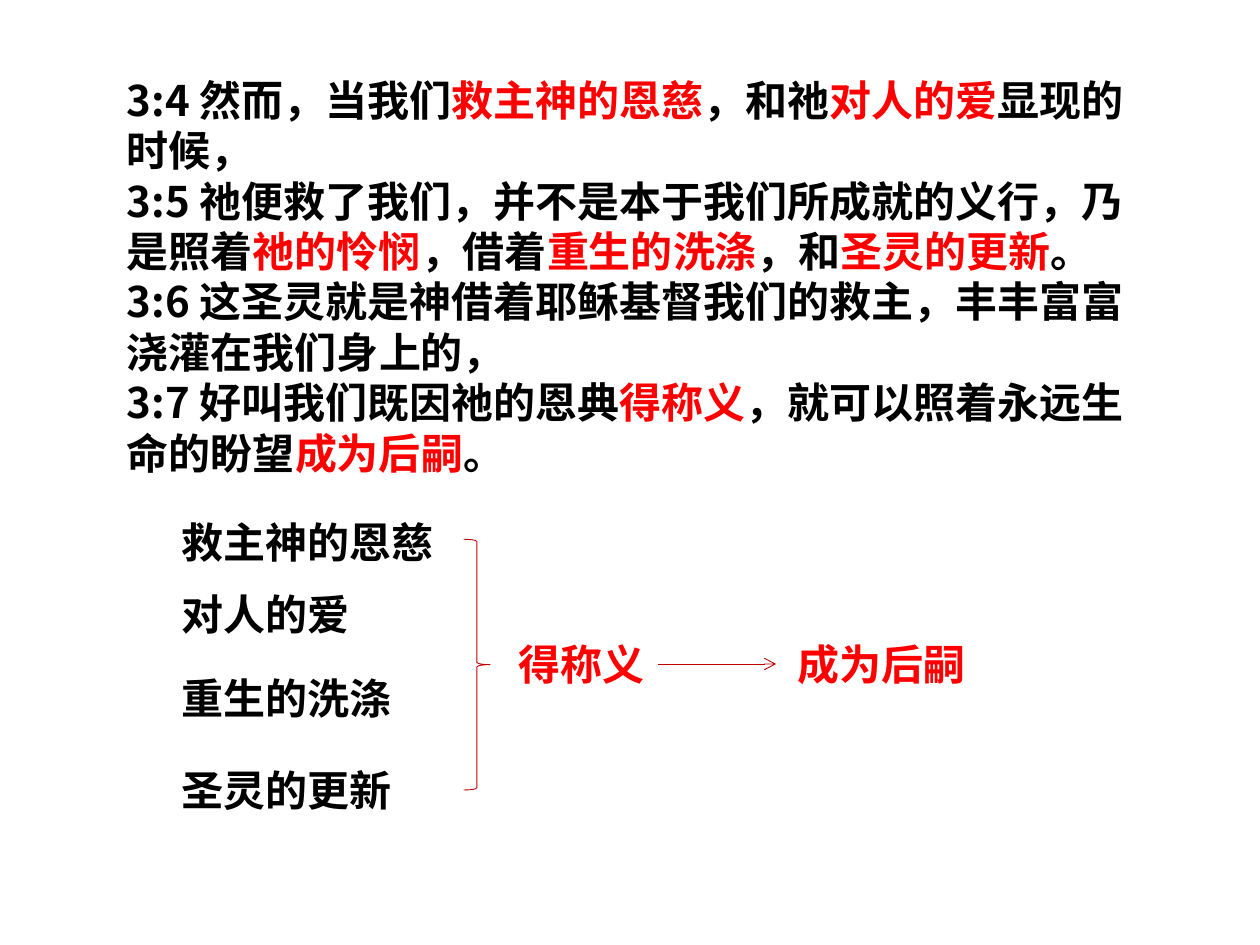
from lxml.etree import SubElement
from pptx import Presentation
from pptx.dml.color import RGBColor
from pptx.enum.shapes import MSO_CONNECTOR, MSO_SHAPE
from pptx.enum.text import MSO_AUTO_SIZE
from pptx.oxml.ns import qn
from pptx.util import Inches, Pt

COLORS = {"text": "000000", "key": "FF0000", "line": "C00000"}
CJK_FONT = "Noto Sans CJK SC"


def style_run(run, color, latin_font):
    run.font.size = Pt(24)
    run.font.bold = True
    run.font.color.rgb = RGBColor.from_string(COLORS[color])
    run.font.name = latin_font
    SubElement(run.font._element, qn("a:ea"), typeface=CJK_FONT)


def add_label(text, left, top, width, color):
    label = slide.shapes.add_textbox(Inches(left), Inches(top), Inches(width), Inches(0.5))
    frame = label.text_frame
    frame.word_wrap = False
    frame.auto_size = MSO_AUTO_SIZE.SHAPE_TO_FIT_TEXT
    frame.text = text
    style_run(frame.paragraphs[0].runs[0], color, "Calibri")
    return label


prs = Presentation()
prs.slide_width, prs.slide_height = Inches(10), Inches(7.5)
slide = prs.slides.add_slide(prs.slide_layouts[6])

# Verses: plain and key phrases alternate, starting with plain
verses = [
    ["3:4 然而，当我们", "救主神的恩慈", "，和祂", "对人的爱", "显现的时候，"],
    ["3:5 祂便救了我们，并不是本于我们所成就的义行，乃是照着", "祂的怜悯", "，借着",
     "重生的洗涤", "，和", "圣灵的更新", "。"],
    ["3:6 这圣灵就是神借着耶稣基督我们的救主，丰丰富富浇灌在我们身上的，"],
    ["3:7 好叫我们既因祂的恩典", "得称义", "，就可以照着永远生命的盼望", "成为后嗣", "。"],
]
passage = slide.shapes.add_textbox(Inches(0.91), Inches(0.54), Inches(8.27), Inches(3.33)).text_frame
passage.word_wrap = True
passage.auto_size = MSO_AUTO_SIZE.SHAPE_TO_FIT_TEXT
for number, phrases in enumerate(verses):
    verse = passage.add_paragraph() if number else passage.paragraphs[0]
    for position, phrase in enumerate(phrases):
        run = verse.add_run()
        run.text = phrase
        style_run(run, "key" if position % 2 else "text", CJK_FONT)

# Causes on the left
for cause, top, width in [("救主神的恩慈", 4.05, 2.21), ("对人的爱", 4.62, 1.54),
                          ("重生的洗涤", 5.29, 1.87), ("圣灵的更新", 6.02, 1.87)]:
    add_label(cause, 1.34, top, width, "text")

# Results on the right
justified = add_label("得称义", 4.02, 5.02, 1.2, "key")
add_label("成为后嗣", 6.23, 5.02, 1.61, "key")

# Brace gathering the causes
brace = slide.shapes.add_shape(MSO_SHAPE.RIGHT_BRACE, Inches(3.68), Inches(4.28), Inches(0.21), Inches(1.99))
brace.shadow.inherit = False
brace.fill.background()

# Arrow between the results
arrow = slide.shapes.add_connector(MSO_CONNECTOR.STRAIGHT, Inches(5.22), Inches(5.27), Inches(6.16), Inches(5.27))
arrow.begin_connect(justified, 3)
for mark in (brace, arrow):
    mark.line.color.rgb = RGBColor.from_string(COLORS["line"])
    mark.line.width = Pt(0.5)
SubElement(arrow.line._get_or_add_ln(), qn("a:tailEnd"), type="arrow")
SubElement(arrow._element.spPr, qn("a:effectLst"))

prs.save("out.pptx")
